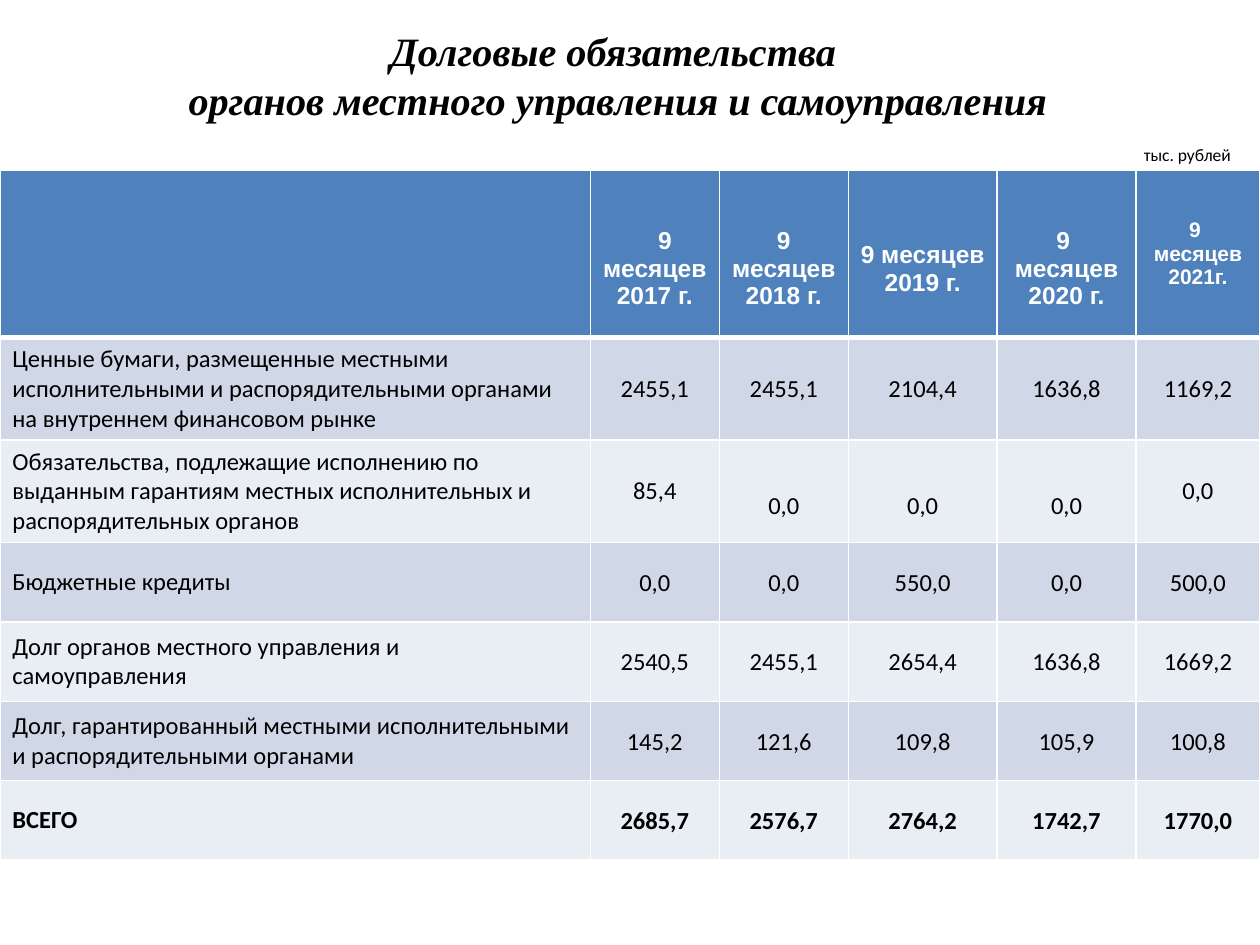
from lxml import etree
from pptx import Presentation
from pptx.dml.color import RGBColor
from pptx.enum.text import MSO_ANCHOR, PP_ALIGN
from pptx.oxml.ns import qn
from pptx.util import Cm, Pt

CENTER, LEFT = PP_ALIGN.CENTER, PP_ALIGN.LEFT
MIDDLE = MSO_ANCHOR.MIDDLE

COLORS = {"header": "4F81BD", "odd": "D0D8E8", "even": "E9EDF4",
          "white": "FFFFFF", "black": "000000"}

TITLE = ["Долговые обязательства ", "органов местного управления и самоуправления"]
UNIT = "тыс. рублей"
PERIODS = [
    [],
    ["9 месяцев", "2017 г."],
    ["9 месяцев 2018 г."],
    ["9 месяцев", "2019 г."],
    ["9 ", "месяцев", "2020 г."],
    ["9 ", "месяцев", "2021г."],
]
DEBTS = [
    ("Ценные бумаги, размещенные местными исполнительными и распорядительными "
     "органами на внутреннем финансовом рынке",
     "2455,1", "2455,1", "2104,4", "1636,8", "1169,2"),
    ("Обязательства, подлежащие исполнению по выданным гарантиям местных "
     "исполнительных и распорядительных органов",
     "85,4", "0,0", "0,0", "0,0", "0,0"),
    ("Бюджетные кредиты", "0,0", "0,0", "550,0", "0,0", "500,0"),
    ("Долг органов местного управления и самоуправления",
     "2540,5", "2455,1", "2654,4", "1636,8", "1669,2"),
    ("Долг, гарантированный местными исполнительными и распорядительными органами",
     "145,2", "121,6", "109,8", "105,9", "100,8"),
    ("ВСЕГО", "2685,7", "2576,7", "2764,2", "1742,7", "1770,0"),
]
COLUMN_WIDTHS = [11.9, 2.6, 2.6, 3, 2.8, 2.5]
ROW_HEIGHTS = [3.38, 2.03, 2.03, 1.6, 1.6, 1.6, 1.6]
WIDE_INSETS = (0.25, 0.13, 0.25, 0.13)
TIGHT_INSETS = (0.03, 0.03, 0.03, 0)
LINE_DROP = 0.6  # figures and periods set one line lower than the rest


def rgb(name):
    return RGBColor.from_string(COLORS[name])


def add_run(paragraph, text, size, font="Calibri", color="black", bold=False, italic=False):
    run = paragraph.add_run()
    run.text = text
    run.font.size = Pt(size)
    run.font.name = font
    run.font.bold = bold
    run.font.italic = italic
    run.font.color.rgb = rgb(color)
    return run


def outline(parent, tag, width, color, position):
    line = etree.Element(qn(tag), w=str(Pt(width)))
    fill = etree.SubElement(line, qn("a:solidFill"))
    etree.SubElement(fill, qn("a:srgbClr"), val=COLORS[color])
    parent.insert(position, line)


def fill_cell(cell, paragraphs, fill, insets, align, drop=0, bottom_border=1, **style):
    """Set borders, fill, insets and text; drop lowers the text by adding top inset."""
    properties = cell._tc.get_or_add_tcPr()
    borders = [("a:lnL", 1), ("a:lnR", 1), ("a:lnT", 1), ("a:lnB", bottom_border)]
    for position, (side, width) in enumerate(borders):
        outline(properties, side, width, "white", position)
    cell.fill.solid()
    cell.fill.fore_color.rgb = rgb(fill)
    cell.vertical_anchor = MIDDLE
    left, top, right, bottom = insets
    cell.margin_left, cell.margin_top = Cm(left), Cm(top + drop)
    cell.margin_right, cell.margin_bottom = Cm(right), Cm(bottom)
    for number, text in enumerate(paragraphs):
        frame = cell.text_frame
        paragraph = frame.add_paragraph() if number else frame.paragraphs[0]
        paragraph.alignment = align
        add_run(paragraph, text, **style)


def add_title(slide):
    frame = slide.shapes.add_textbox(Cm(1.04), Cm(-0.08), Cm(22.86), Cm(3.18)).text_frame
    frame.word_wrap = True
    frame.vertical_anchor = MIDDLE
    paragraph = frame.paragraphs[0]
    paragraph.alignment = CENTER
    for number, line in enumerate(TITLE):
        if number:
            paragraph.add_line_break()
        run = add_run(paragraph, line, 23, "Times New Roman", bold=True, italic=True)
        outline(run.font._element, "a:ln", 0.75, "black", 0)


def add_debt_table(slide):
    table = slide.shapes.add_table(
        len(ROW_HEIGHTS), len(COLUMN_WIDTHS), Cm(0), Cm(3.43),
        Cm(sum(COLUMN_WIDTHS)), Cm(sum(ROW_HEIGHTS))).table
    for column, width in zip(table.columns, COLUMN_WIDTHS):
        column.width = Cm(width)
    for row, height in zip(table.rows, ROW_HEIGHTS):
        row.height = Cm(height)

    latest = len(PERIODS) - 1
    for col, lines in enumerate(PERIODS):
        fill_cell(table.cell(0, col), lines, "header", WIDE_INSETS, CENTER,
                  drop=0 if col == latest else LINE_DROP, bottom_border=3,
                  size=12 if col == latest else 14, font="Arial", color="white", bold=True)
    first_period = table.cell(0, 1).text_frame.paragraphs[0]
    first_period._p.get_or_add_pPr().set("indent", str(Cm(0.41)))

    for row, debt in enumerate(DEBTS, start=1):
        for col, text in enumerate(debt):
            lowered = row == 2 and 2 <= col < latest
            fill_cell(table.cell(row, col), [text], "odd" if row % 2 else "even",
                      TIGHT_INSETS if row > 2 and col else WIDE_INSETS,
                      CENTER if col else LEFT, drop=LINE_DROP if lowered else 0,
                      size=14, bold=row == len(DEBTS))


def main():
    deck = Presentation()
    deck.slide_width, deck.slide_height = Cm(25.4), Cm(19.05)
    slide = deck.slides.add_slide(deck.slide_layouts[6])
    add_debt_table(slide)
    add_title(slide)
    unit = slide.shapes.add_textbox(Cm(22.81), Cm(2.77), Cm(2.29), Cm(0.69)).text_frame
    unit.word_wrap = False
    add_run(unit.paragraphs[0], UNIT, 10)
    deck.save("out.pptx")


if __name__ == "__main__":
    main()
